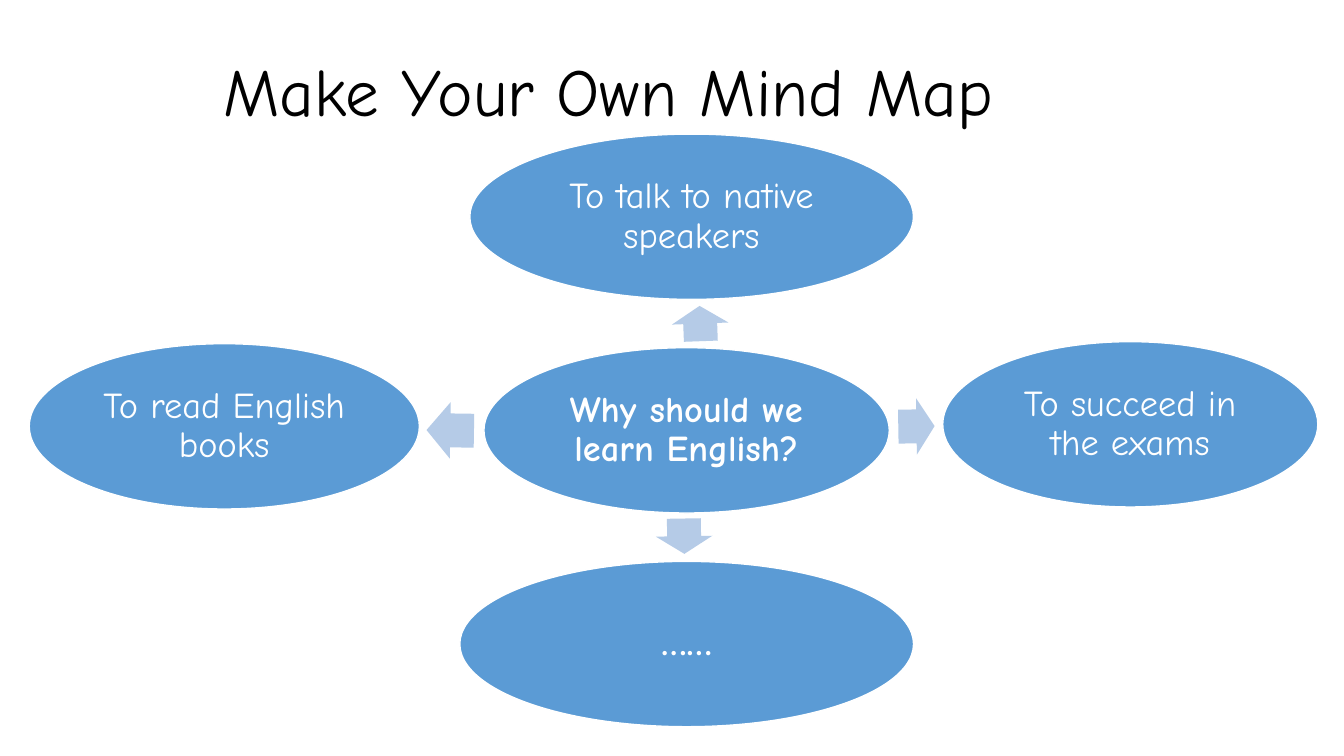
from dataclasses import dataclass

from pptx import Presentation
from pptx.dml.color import RGBColor
from pptx.enum.shapes import MSO_SHAPE
from pptx.enum.text import MSO_ANCHOR, PP_ALIGN
from pptx.shapes.autoshape import Shape
from pptx.slide import Slide
from pptx.util import Inches, Pt

ELLIPSE = MSO_SHAPE.OVAL
RIGHT_ARROW = MSO_SHAPE.RIGHT_ARROW
MIDDLE = MSO_ANCHOR.MIDDLE
LEFT, CENTER = PP_ALIGN.LEFT, PP_ALIGN.CENTER

BLACK = RGBColor(0x00, 0x00, 0x00)
WHITE = RGBColor(0xFF, 0xFF, 0xFF)
BLUE = RGBColor(0x5B, 0x9B, 0xD5)
PALE_BLUE = RGBColor(0xB5, 0xCB, 0xE7)

SLIDE_WIDTH, SLIDE_HEIGHT = Inches(13.33), Inches(7.5)
HEADING_FONT = "Comic Neue"
BODY_FONT = "Calibri"

# Positions and sizes are percentages of the slide's width and height.
BUBBLE_HEIGHT = 21.87
ARROW_HEIGHT = 7.47


@dataclass(frozen=True)
class Bubble:
    text: str
    center_x: float
    center_y: float
    width: float
    bold: bool = False
    font_name: str = HEADING_FONT


@dataclass(frozen=True)
class Arrow:
    center_x: float
    center_y: float
    length: float
    rotation: float


BUBBLES = [
    Bubble("Why should we learn English?", 51.09, 56.93, 30.16, bold=True),
    Bubble("To read English books", 16.69, 56.4, 29.03),
    Bubble("To talk to native speakers", 51.46, 28.67, 33.01),
    Bubble("To succeed in the exams", 84.1, 56.13, 27.91),
    Bubble("……", 51.09, 85.2, 33.76, font_name=BODY_FONT),
]

ARROWS = [
    Arrow(52.1, 42.8, 2.63, 267.9),
    Arrow(33.5, 56.93, 3.53, 180.9),
    Arrow(68.19, 56.4, 2.7, 359.1),
    Arrow(50.9, 70.93, 2.63, 89.1),
]


def across(percent: float) -> int:
    return round(SLIDE_WIDTH * percent / 100)


def down(percent: float) -> int:
    return round(SLIDE_HEIGHT * percent / 100)


def add_centered_shape(slide: Slide, kind: MSO_SHAPE, center_x: float, center_y: float,
                       width: float, height: float, color: RGBColor) -> Shape:
    shape = slide.shapes.add_shape(
        kind, across(center_x - width / 2), down(center_y - height / 2),
        across(width), down(height))
    shape.shadow.inherit = False
    shape.fill.solid()
    shape.fill.fore_color.rgb = color
    return shape


def write_text(shape: Shape, text: str, alignment: PP_ALIGN, color: RGBColor,
               font_format: dict) -> None:
    frame = shape.text_frame
    frame.word_wrap = True
    frame.vertical_anchor = MIDDLE
    paragraph = frame.paragraphs[0]
    paragraph.alignment = alignment
    paragraph.line_spacing = 0.9
    run = paragraph.add_run()
    run.text = text
    run.font.color.rgb = color
    for name, value in font_format.items():
        setattr(run.font, name, value)


def add_title(slide: Slide) -> None:
    box = slide.shapes.add_textbox(across(15.9), down(5.33), across(77.27), down(14.4))
    write_text(box, "Make Your Own Mind Map", LEFT, BLACK,
               {"name": HEADING_FONT, "size": Pt(48)})


def add_bubble(slide: Slide, bubble: Bubble) -> None:
    shape = add_centered_shape(slide, ELLIPSE, bubble.center_x, bubble.center_y,
                               bubble.width, BUBBLE_HEIGHT, BLUE)
    shape.line.color.rgb = WHITE
    shape.line.width = Pt(1)
    for side in ("left", "top", "right", "bottom"):
        setattr(shape.text_frame, f"margin_{side}", Inches(0.04))
    write_text(shape, bubble.text, CENTER, WHITE,
               {"name": bubble.font_name, "size": Pt(26), "bold": bubble.bold})


def add_arrow(slide: Slide, arrow: Arrow) -> None:
    shape = add_centered_shape(slide, RIGHT_ARROW, arrow.center_x, arrow.center_y,
                               arrow.length, ARROW_HEIGHT, PALE_BLUE)
    shape.line.fill.background()
    shape.adjustments[0] = 0.6
    shape.adjustments[1] = 0.5
    shape.rotation = arrow.rotation


def main() -> None:
    presentation = Presentation()
    presentation.slide_width = SLIDE_WIDTH
    presentation.slide_height = SLIDE_HEIGHT
    slide = presentation.slides.add_slide(presentation.slide_layouts[6])
    add_title(slide)
    for arrow in ARROWS:
        add_arrow(slide, arrow)
    for bubble in BUBBLES:
        add_bubble(slide, bubble)
    presentation.save("out.pptx")


if __name__ == "__main__":
    main()
